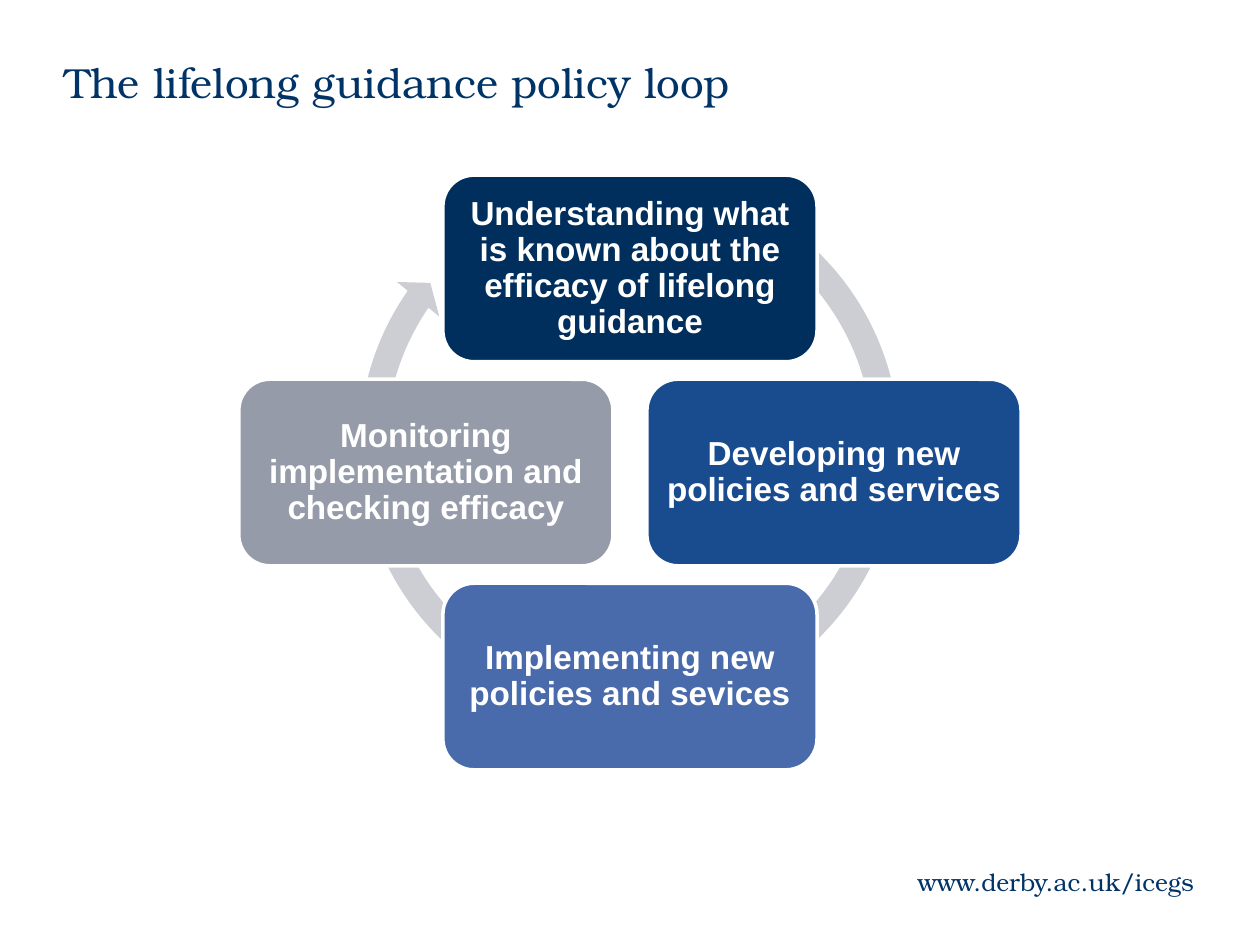
import pptx
import pptx.util
import pptx.dml.color
import pptx.enum.shapes
import pptx.enum.text

Pt = pptx.util.Pt
SHAPE = pptx.enum.shapes.MSO_SHAPE
ANCHOR = pptx.enum.text.MSO_ANCHOR
ALIGN = pptx.enum.text.PP_ALIGN

COLOURS = {
    "heading": "003467",
    "arrow": "CCCED3",
    "white": "FFFFFF",
    "understand": "002F5D",
    "develop": "194C8F",
    "implement": "496BAB",
    "monitor": "959BA9",
}

TITLE = "The lifelong guidance policy loop"
WEB_ADDRESS = "www.derby.ac.uk/icegs"

# Text, colour, and direction from the centre of the loop
STEPS = [
    ("Understanding what is known about the efficacy of lifelong guidance", "understand", (0, -1)),
    ("Developing new policies and services", "develop", (1, 0)),
    ("Implementing new policies and sevices", "implement", (0, 1)),
    ("Monitoring implementation and checking efficacy", "monitor", (-1, 0)),
]

CENTRE_X, CENTRE_Y = 360, 270
STEP_OFFSET = 116.6
STEP_WIDTH, STEP_HEIGHT = 213.8, 106.6
STEP_MARGIN = 5.4

ARROW_SIZE = 324.7
ARROW_CENTRE = (359.6, 254.5)
ARROW_ADJUSTMENTS = [0.047, 2.729, 128.809, 179.972, 0.048]

HEADING_FONT = {"name": "TeX Gyre Bonum"}
STEP_FONT = {"name": "Arial", "size": Pt(19), "bold": True}


def colour(name):
    return pptx.dml.color.RGBColor.from_string(COLOURS[name])


def write_text(shape, text, font, colour_name, frame, paragraph_format):
    text_frame = shape.text_frame
    text_frame.text = text
    paragraph = text_frame.paragraphs[0]
    for target, values in (
        (text_frame, frame),
        (paragraph, paragraph_format),
        (paragraph.runs[0].font, font),
    ):
        for attribute, value in values.items():
            setattr(target, attribute, value)
    paragraph.runs[0].font.color.rgb = colour(colour_name)


def margins(size):
    return {f"margin_{side}": Pt(size) for side in ("left", "top", "right", "bottom")}


def add_centred_shape(slide, kind, centre_x, centre_y, width, height, fill):
    shape = slide.shapes.add_shape(
        kind, Pt(centre_x - width / 2), Pt(centre_y - height / 2), Pt(width), Pt(height)
    )
    shape.shadow.inherit = False
    shape.fill.solid()
    shape.fill.fore_color.rgb = colour(fill)
    return shape


def add_loop(slide):
    arrow = add_centred_shape(
        slide, SHAPE.CIRCULAR_ARROW, *ARROW_CENTRE, ARROW_SIZE, ARROW_SIZE, "arrow"
    )
    arrow.line.fill.background()
    for index, value in enumerate(ARROW_ADJUSTMENTS):
        arrow.adjustments[index] = value

    frame = {"word_wrap": True, "vertical_anchor": ANCHOR.MIDDLE, **margins(STEP_MARGIN)}
    for text, fill, (across, down) in STEPS:
        step = add_centred_shape(
            slide, SHAPE.ROUNDED_RECTANGLE,
            CENTRE_X + across * STEP_OFFSET, CENTRE_Y + down * STEP_OFFSET,
            STEP_WIDTH, STEP_HEIGHT, fill,
        )
        step.line.color.rgb = colour("white")
        step.line.width = Pt(2)
        write_text(step, text, STEP_FONT, "white", frame,
                   {"alignment": ALIGN.CENTER, "line_spacing": 0.9})


def main():
    presentation = pptx.Presentation()
    presentation.slide_width, presentation.slide_height = Pt(720), Pt(540)
    slide = presentation.slides.add_slide(presentation.slide_layouts[6])

    title = slide.shapes.add_textbox(Pt(29.5), Pt(28.8), Pt(658.8), Pt(64.8))
    write_text(title, TITLE, {**HEADING_FONT, "size": Pt(24)}, "heading",
               {"word_wrap": True}, {"alignment": ALIGN.LEFT})

    footer = slide.shapes.add_textbox(Pt(524.2), Pt(467.3), Pt(158.4), Pt(72.7))
    write_text(footer, WEB_ADDRESS, {**HEADING_FONT, "size": Pt(14)}, "heading",
               {"word_wrap": False, "vertical_anchor": ANCHOR.MIDDLE, **margins(0)},
               {"alignment": ALIGN.CENTER})

    add_loop(slide)
    presentation.save("out.pptx")


if __name__ == "__main__":
    main()
